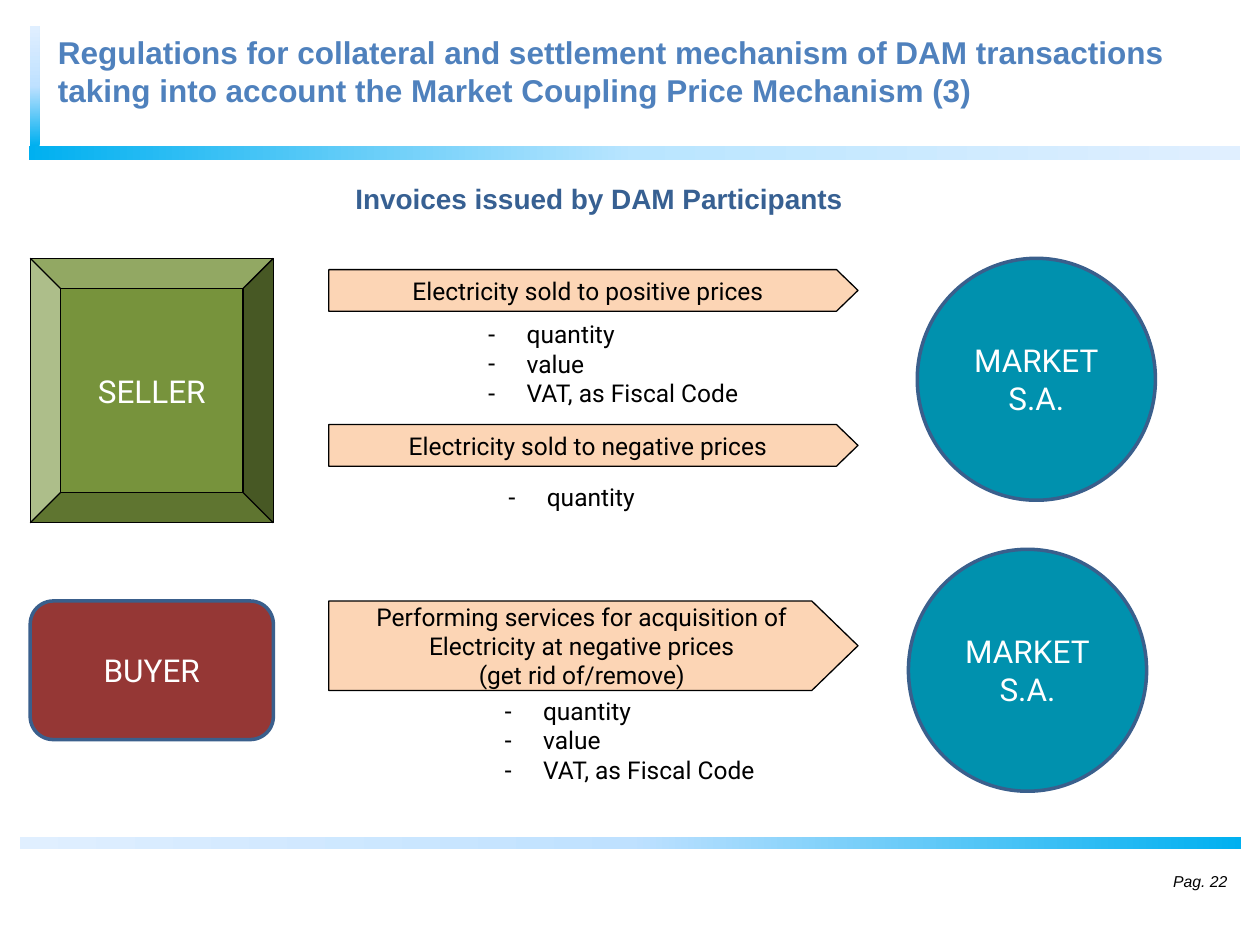
from lxml.etree import SubElement
from pptx import Presentation
from pptx.dml.color import RGBColor
from pptx.enum.shapes import MSO_SHAPE as Kind
from pptx.enum.text import MSO_ANCHOR as Anchor, MSO_AUTO_SIZE as Fit, PP_ALIGN as Align
from pptx.oxml.ns import qn
from pptx.util import Inches, Pt

WHITE = RGBColor(0xFF, 0xFF, 0xFF)
BLACK = RGBColor(0x00, 0x00, 0x00)
BLUE = RGBColor(0x4F, 0x81, 0xBD)
NAVY = RGBColor(0x37, 0x60, 0x92)
EDGE = RGBColor(0x3A, 0x5F, 0x8C)
TEAL = RGBColor(0x00, 0x91, 0xAE)
GREEN = RGBColor(0x77, 0x93, 0x3C)
RED = RGBColor(0x95, 0x37, 0x35)
PEACH = RGBColor(0xFC, 0xD5, 0xB5)
SKY = RGBColor(0x00, 0xB0, 0xF0)
MIST = RGBColor(0xBF, 0xE1, 0xFF)
PALE = RGBColor(0xE0, 0xEF, 0xFF)
AQUA = RGBColor(0xB9, 0xE5, 0xFF)

FULL = ["quantity", "value", "VAT, as Fiscal Code"]
FIRM = ["MARKET", "S.A."]


def put(item, box):
    """Move an item to a box given in inches."""
    item.left, item.top, item.width, item.height = map(Inches, box)


def write(frame, lines, size, color, face="Roboto", align=Align.CENTER,
          anchor=Anchor.MIDDLE, bold=False, italic=False, dash=False):
    """Fill a text frame with one paragraph per line."""
    frame.auto_size = Fit.NONE
    frame.vertical_anchor = anchor
    for i, line in enumerate(lines):
        para = frame.paragraphs[0] if i == 0 else frame.add_paragraph()
        para.alignment = align
        para.space_before = Pt(0)
        props = para._p.get_or_add_pPr()
        gap = Inches(0.31) if dash else 0
        props.set("marL", str(gap))
        props.set("indent", str(-gap))
        if dash:
            SubElement(props, qn("a:buChar"), char="-")
        else:
            SubElement(props, qn("a:buNone"))
        run = para.add_run()
        run.text = line
        font = run.font
        font.name, font.size, font.bold, font.italic = face, Pt(size), bold, italic
        font.color.rgb = color


def bar(slide, box, mid=MIST, turn=0):
    """Draw a gradient bar, turned by the given degrees."""
    strip = slide.shapes.add_shape(Kind.RECTANGLE, *map(Inches, box))
    strip.shadow.inherit = False
    strip.line.fill.background()
    strip.rotation = turn
    strip.fill.gradient()
    strip.fill.gradient_angle = 0
    stops = strip._element.spPr.find(".//" + qn("a:gsLst"))
    stops.clear()
    for pos, color in ((0, SKY), (50, mid), (100, PALE)):
        stop = SubElement(stops, qn("a:gs"), pos=str(pos * 1000))
        SubElement(stop, qn("a:srgbClr"), val=str(color))


def block(slide, kind, box, lines, fill, edge=EDGE, width=2, size=18,
          color=WHITE, wrap=True):
    """Draw a filled shape with centred text."""
    shape = slide.shapes.add_shape(kind, *map(Inches, box))
    shape.shadow.inherit = False
    shape.fill.solid()
    shape.fill.fore_color.rgb = fill
    shape.line.color.rgb = edge
    shape.line.width = Pt(width)
    shape.text_frame.word_wrap = wrap
    write(shape.text_frame, lines, size, color)
    return shape


def arrow(slide, top, height, lines):
    """Draw an arrow-shaped label in the middle column."""
    shape = block(slide, Kind.PENTAGON, (2.61, top, 4.2, height), lines, PEACH,
                  BLACK, 0.75, 14, BLACK, False)
    shape.adjustments[0] = 0.516


def bullets(holder, box, lines):
    """Write a dashed list in a body placeholder."""
    put(holder, box)
    write(holder.text_frame, lines, 14, BLACK, align=Align.LEFT, dash=True)


def head(slide):
    """Place the title, the subtitle and the bars around them."""
    bar(slide, (0.23, 1.16, 9.61, 0.11), AQUA)
    bar(slide, (-0.2, 0.64, 0.95, 0.08), turn=270)
    title = slide.shapes.title
    put(title, (0.36, 0.21, 9.44, 0.79))
    write(title.text_frame,
          ["Regulations for collateral and settlement mechanism of DAM transactions "
           "taking into account the Market Coupling Price Mechanism (3)"],
          18, BLUE, "Arial", Align.LEFT, Anchor.TOP, bold=True)
    sub = slide.placeholders[1]
    put(sub, (2.72, 1.39, 4.94, 0.37))
    write(sub.text_frame, ["Invoices issued by DAM Participants"],
          16, NAVY, "Arial", Align.LEFT, Anchor.TOP, bold=True)


def seller(slide):
    """Place the seller's row."""
    block(slide, Kind.BEVEL, (0.24, 2.05, 1.93, 2.1), ["SELLER"], GREEN, BLACK, 0.75)
    arrow(slide, 2.14, 0.33, ["Electricity sold to positive prices"])
    bullets(slide.placeholders[2], (3.77, 2.57, 2.97, 0.63), FULL)
    arrow(slide, 3.37, 0.33, ["Electricity sold to negative prices"])
    bullets(slide.placeholders[3], (3.93, 3.75, 2.11, 0.39), FULL[:1])
    block(slide, Kind.OVAL, (7.28, 2.05, 1.89, 1.92), FIRM, TEAL)


def buyer(slide):
    """Place the buyer's row."""
    block(slide, Kind.ROUNDED_RECTANGLE, (0.24, 4.77, 1.93, 1.1), ["BUYER"], RED)
    arrow(slide, 4.77, 0.71, ["Performing services for acquisition of",
                              "Electricity at negative prices",
                              "(get rid of/remove)"])
    bullets(slide.placeholders[4], (3.9, 5.56, 2.6, 0.63), FULL)
    block(slide, Kind.OVAL, (7.21, 4.36, 1.89, 1.92), FIRM, TEAL)


def foot(slide):
    """Place the lower bar and the page number."""
    bar(slide, (0.16, 6.64, 9.69, 0.1), turn=180)
    page = slide.shapes.add_textbox(*map(Inches, (8.75, 6.79, 1.09, 0.4)))
    page.text_frame.word_wrap = True
    write(page.text_frame, ["Pag. 22"], 9, BLACK, "Arial", Align.RIGHT, italic=True)


def main():
    """Build and save the slide."""
    deck = Presentation()
    deck.slide_width, deck.slide_height = Inches(10), Inches(7.5)
    slide = deck.slides.add_slide(deck.slide_layouts[4])
    for part in (head, seller, buyer, foot):
        part(slide)
    deck.save("out.pptx")


if __name__ == "__main__":
    main()
